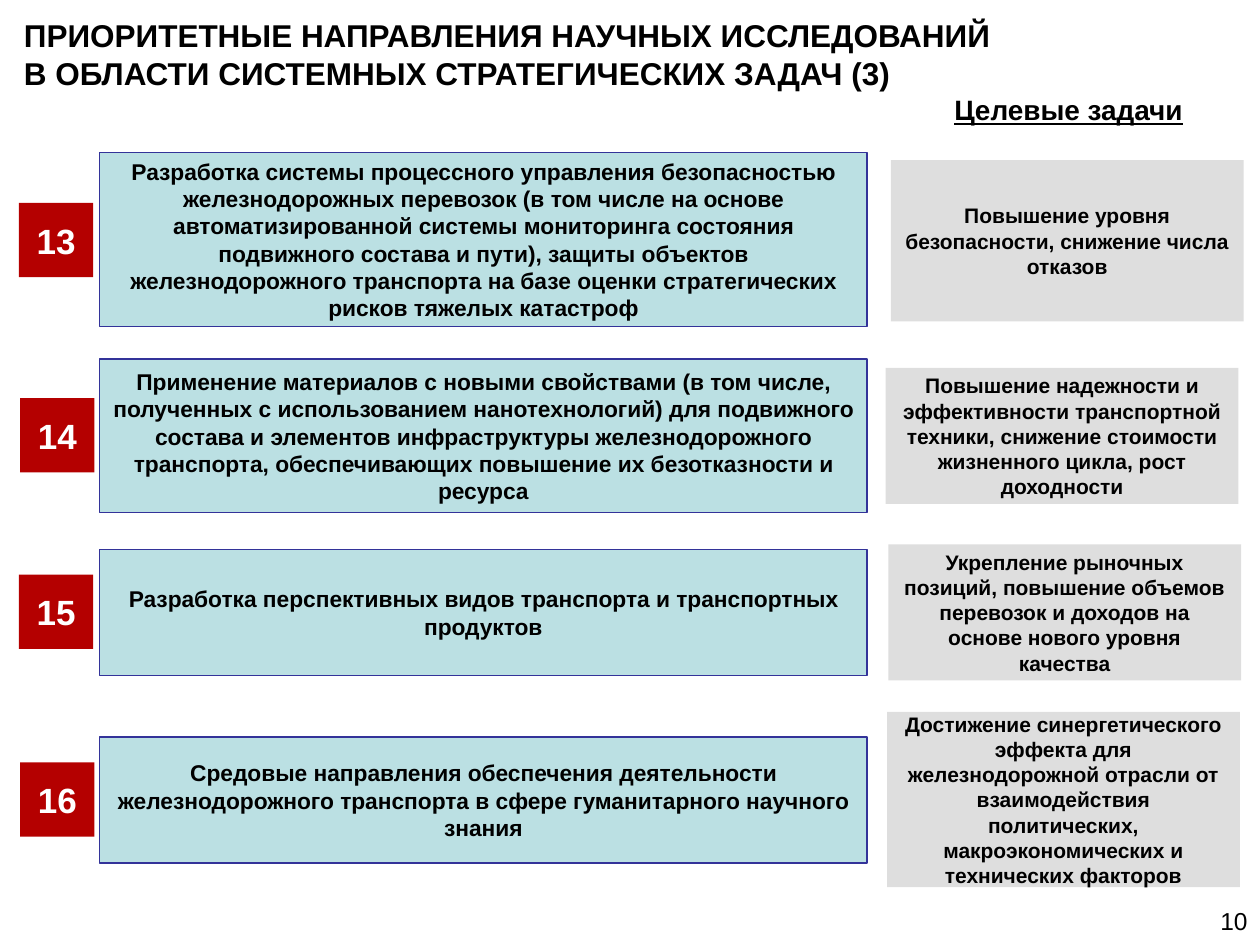
from lxml import etree
from pptx import Presentation
from pptx.dml.color import RGBColor
from pptx.enum.shapes import MSO_SHAPE
from pptx.enum.text import MSO_ANCHOR, MSO_AUTO_SIZE, PP_ALIGN
from pptx.oxml.ns import qn
from pptx.util import Inches, Pt

RECTANGLE = MSO_SHAPE.RECTANGLE
TOP, MIDDLE = MSO_ANCHOR.TOP, MSO_ANCHOR.MIDDLE
NO_AUTOFIT = MSO_AUTO_SIZE.NONE
LEFT, CENTER, RIGHT = PP_ALIGN.LEFT, PP_ALIGN.CENTER, PP_ALIGN.RIGHT
TITLE_ONLY = 5

COLORS = {
    "text": "000000",
    "white": "FFFFFF",
    "badge": "B40000",
    "direction": "BBE0E3",
    "border": "333399",
    "goal": "C0C0C0",
}
GOAL_OPACITY = 51

TITLE = ("ПРИОРИТЕТНЫЕ НАПРАВЛЕНИЯ НАУЧНЫХ ИССЛЕДОВАНИЙ "
         "В ОБЛАСТИ СИСТЕМНЫХ СТРАТЕГИЧЕСКИХ ЗАДАЧ (3)")
FIRST_NUMBER = 13
BADGE_SIZE = 0.59
DIRECTION_LEFT, DIRECTION_WIDTH = 0.79, 6.09
GOAL_WIDTH = 2.8

ROWS = [
    {
        "direction": "Разработка системы процессного управления безопасностью "
                     "железнодорожных перевозок (в том числе на основе "
                     "автоматизированной системы мониторинга состояния подвижного "
                     "состава и пути), защиты объектов железнодорожного транспорта "
                     "на базе оценки стратегических рисков тяжелых катастроф",
        "goal": "Повышение уровня безопасности, снижение числа отказов",
        "direction_span": (1.21, 1.38),
        "goal_box": (7.07, 1.27, GOAL_WIDTH, 1.28),
        "badge_at": (0.15, 1.61),
    },
    {
        "direction": "Применение материалов с новыми свойствами (в том числе, "
                     "полученных с использованием нанотехнологий) для подвижного "
                     "состава и элементов инфраструктуры железнодорожного "
                     "транспорта, обеспечивающих повышение их безотказности и ресурса",
        "goal": "Повышение надежности и эффективности транспортной техники, "
                "снижение стоимости жизненного цикла, рост доходности",
        "direction_span": (2.85, 1.22),
        "goal_box": (7.03, 2.92, GOAL_WIDTH, 1.08),
        "badge_at": (0.16, 3.16),
    },
    {
        "direction": "Разработка перспективных видов транспорта и "
                     "транспортных продуктов",
        "goal": "Укрепление рыночных позиций, повышение объемов перевозок и "
                "доходов на основе нового уровня качества",
        "direction_span": (4.36, 1),
        "goal_box": (7.05, 4.32, GOAL_WIDTH, 1.08),
        "badge_at": (0.15, 4.56),
    },
    {
        "direction": "Средовые направления обеспечения деятельности "
                     "железнодорожного транспорта в сфере гуманитарного "
                     "научного знания",
        "goal": "Достижение синергетического эффекта для железнодорожной отрасли "
                "от взаимодействия политических, макроэкономических и "
                "технических факторов",
        "direction_span": (5.85, 1),
        "goal_box": (7.04, 5.65, GOAL_WIDTH, 1.39),
        "badge_at": (0.16, 6.05),
    },
]


def rgb(name):
    """Return the palette colour of that name."""
    return RGBColor.from_string(COLORS[name])


def write(shape, text, size, color="text", bold=True, underline=False,
          align=CENTER, anchor=MIDDLE, side_inset=0.1):
    """Put one formatted paragraph into a shape."""
    frame = shape.text_frame
    frame.word_wrap = True
    frame.auto_size = NO_AUTOFIT
    frame.vertical_anchor = anchor
    frame.margin_left = frame.margin_right = Inches(side_inset)
    frame.margin_top = frame.margin_bottom = Inches(0.05)
    paragraph = frame.paragraphs[0]
    paragraph.alignment = align
    run = paragraph.add_run()
    run.text = text
    font = run.font
    font.name = "Arial"
    font.size = Pt(size)
    font.bold = bold
    font.underline = underline
    font.color.rgb = rgb(color)


def add_panel(shapes, box, fill, border=None, opacity=None):
    """Add a filled rectangle with an optional border and opacity in percent."""
    panel = shapes.add_shape(RECTANGLE, *map(Inches, box))
    panel.shadow.inherit = False
    panel.fill.solid()
    panel.fill.fore_color.rgb = rgb(fill)
    if opacity is not None:
        color = panel.fill._xPr.find(".//" + qn("a:srgbClr"))
        etree.SubElement(color, qn("a:alpha"), val=str(opacity * 1000))
    if border:
        panel.line.color.rgb = rgb(border)
        panel.line.width = Pt(0.75)
    else:
        panel.line.fill.background()
    return panel


def add_label(slide, box, text, **style):
    """Add a text box with one formatted paragraph."""
    write(slide.shapes.add_textbox(*map(Inches, box)), text, **style)


def place_title(slide, box):
    """Move and format the title placeholder."""
    title = slide.shapes.title
    title.left, title.top, title.width, title.height = map(Inches, box)
    title.fill.solid()
    title.fill.fore_color.rgb = rgb("white")
    write(title, TITLE, size=18, align=LEFT, side_inset=0)


def add_row(slide, number, direction, goal, direction_span, goal_box, badge_at):
    """Add one group of goal, research direction and number badge."""
    shapes = slide.shapes.add_group_shape().shapes
    goal_panel = add_panel(shapes, goal_box, "goal", opacity=GOAL_OPACITY)
    write(goal_panel, goal, size=12)
    top, height = direction_span
    direction_box = (DIRECTION_LEFT, top, DIRECTION_WIDTH, height)
    direction_panel = add_panel(shapes, direction_box, "direction", border="border")
    write(direction_panel, direction, size=13)
    badge = add_panel(shapes, (*badge_at, BADGE_SIZE, BADGE_SIZE), "badge")
    write(badge, str(number), size=20, color="white", side_inset=0)


def main():
    """Build the slide and save it."""
    presentation = Presentation()
    presentation.slide_width = Inches(10)
    presentation.slide_height = Inches(7.5)
    slide = presentation.slides.add_slide(presentation.slide_layouts[TITLE_ONLY])
    place_title(slide, (0.19, 0.11, 7.87, 0.63))
    add_label(slide, (7.34, 0.65, 2.28, 0.44), "Целевые задачи",
              size=16, underline=True)
    for number, row in enumerate(ROWS, FIRST_NUMBER):
        add_row(slide, number, **row)
    add_label(slide, (9.51, 7.14, 0.49, 0.52), "10",
              size=14, bold=False, align=RIGHT, anchor=TOP)
    presentation.save("out.pptx")


if __name__ == "__main__":
    main()
